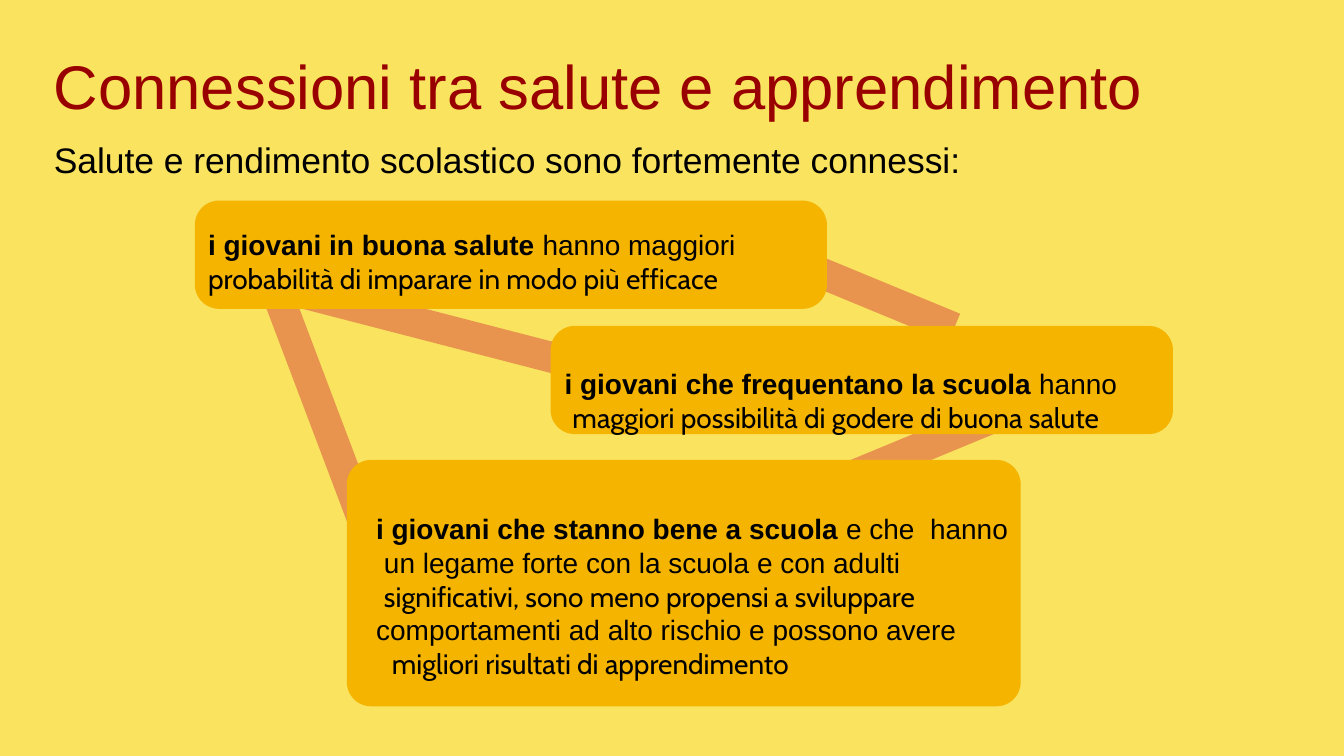
from lxml import etree
from pptx import Presentation
from pptx import util as u
from pptx.dml.color import RGBColor
from pptx.enum import shapes, text
from pptx.oxml.ns import qn

HUES = {"back": "FAE35F", "box": "F4B400", "link": "E8944F",
        "title": "990000", "ink": "000000"}


class Deck:
    face = "Arial"
    size = 15
    pitch = 18
    radius = 13
    frame = {"word_wrap": True, "auto_size": text.MSO_AUTO_SIZE.NONE,
             "vertical_anchor": text.MSO_ANCHOR.TOP}

    def __init__(self, slide):
        self.slide = slide
        fill = slide.background.fill
        fill.solid()
        fill.fore_color.rgb = self.hue("back")

    def hue(self, name):
        return RGBColor.from_string(HUES[name])

    def setup(self, tf, left=0, top=0):
        form = {**self.frame, "margin_left": u.Pt(left), "margin_top": u.Pt(top),
                "margin_right": 0, "margin_bottom": 0}
        for key, val in form.items():
            setattr(tf, key, val)

    def run(self, para, words, hue="ink", **form):
        run = para.add_run()
        run.text = words
        form = {"name": self.face, "size": u.Pt(self.size), "bold": False, **form}
        for key, val in form.items():
            setattr(run.font, key, val)
        run.font.color.rgb = self.hue(hue)

    def place(self, shape, left, top, width, height):
        spots = {"left": left, "top": top, "width": width, "height": height}
        for key, val in spots.items():
            setattr(shape, key, u.Pt(val))

    def line(self, shape, words, size, hue):
        self.setup(shape.text_frame)
        para = shape.text_frame.paragraphs[0]
        para.alignment = text.PP_ALIGN.LEFT
        self.run(para, words, hue, size=u.Pt(size))

    def title(self, words, *area):
        shape = self.slide.shapes.title
        self.place(shape, *area)
        self.line(shape, words, 33, "title")

    def label(self, words, *area):
        shape = self.slide.shapes.add_textbox(*map(u.Pt, area))
        self.line(shape, words, 19, "ink")

    def link(self, *ends):
        wire = self.slide.shapes.add_connector(
            shapes.MSO_CONNECTOR.STRAIGHT, *map(u.Pt, ends))
        wire.line.width = u.Pt(16.5)
        wire.line.color.rgb = self.hue("link")
        etree.SubElement(wire._element.spPr, qn("a:effectLst"))

    def box(self, area, inset, lines):
        shape = self.slide.shapes.add_shape(
            shapes.MSO_SHAPE.ROUNDED_RECTANGLE, *map(u.Pt, area))
        shape.adjustments[0] = self.radius / area[3]
        shape.shadow.inherit = False
        shape.fill.solid()
        shape.fill.fore_color.rgb = self.hue("box")
        shape.line.fill.background()
        tf = shape.text_frame
        self.setup(tf, *inset)
        for i, (indent, face, bold, plain) in enumerate(lines):
            para = tf.add_paragraph() if i else tf.paragraphs[0]
            para.alignment = text.PP_ALIGN.LEFT
            para.line_spacing = u.Pt(self.pitch)
            para._p.get_or_add_pPr().set("marL", str(u.Pt(indent)))
            if bold:
                self.run(para, bold, bold=True)
            self.run(para, plain, name=face)


def main():
    prs = Presentation()
    prs.slide_width, prs.slide_height = u.Pt(720), u.Pt(405)
    deck = Deck(prs.slides.add_slide(prs.slide_layouts[5]))
    deck.title("Connessioni tra salute e apprendimento", 28.8, 25.5, 662, 40)
    deck.label("Salute e rendimento scolastico sono fortemente connessi:",
               28.8, 73.8, 650, 24)

    for ends in [(142.6, 151.9, 315.4, 196.6), (383.8, 123.1, 511.2, 175.7),
                 (357.8, 295.9, 568.1, 208.8), (139.7, 133.9, 218.9, 343.4)]:
        deck.link(*ends)

    deck.box((104.4, 107.5, 338.6, 58), (3.3, 10.8), [
        (0, "Arial", "i giovani in buona salute ", "hanno maggiori"),
        (0, "Cabin", "", "probabilità di imparare in modo più efficace")])
    deck.box((185.8, 246.4, 361, 132), (11.9, 24), [
        (0, "Arial", "i giovani che stanno bene a scuola ", "e che  hanno"),
        (4.2, "Arial", "", "un legame forte con la scuola e con adulti"),
        (4.2, "Cabin", "", "significativi, sono meno propensi a sviluppare"),
        (0, "Arial", "", "comportamenti ad alto rischio e possono avere"),
        (8.4, "Cabin", "", "migliori risultati di apprendimento")])
    deck.box((295, 174.6, 333.4, 58), (3.7, 18), [
        (0, "Arial", "i giovani che frequentano la scuola ", "hanno"),
        (4.2, "Cabin", "", "maggiori possibilità di godere di buona salute")])
    prs.save("out.pptx")


if __name__ == "__main__":
    main()
